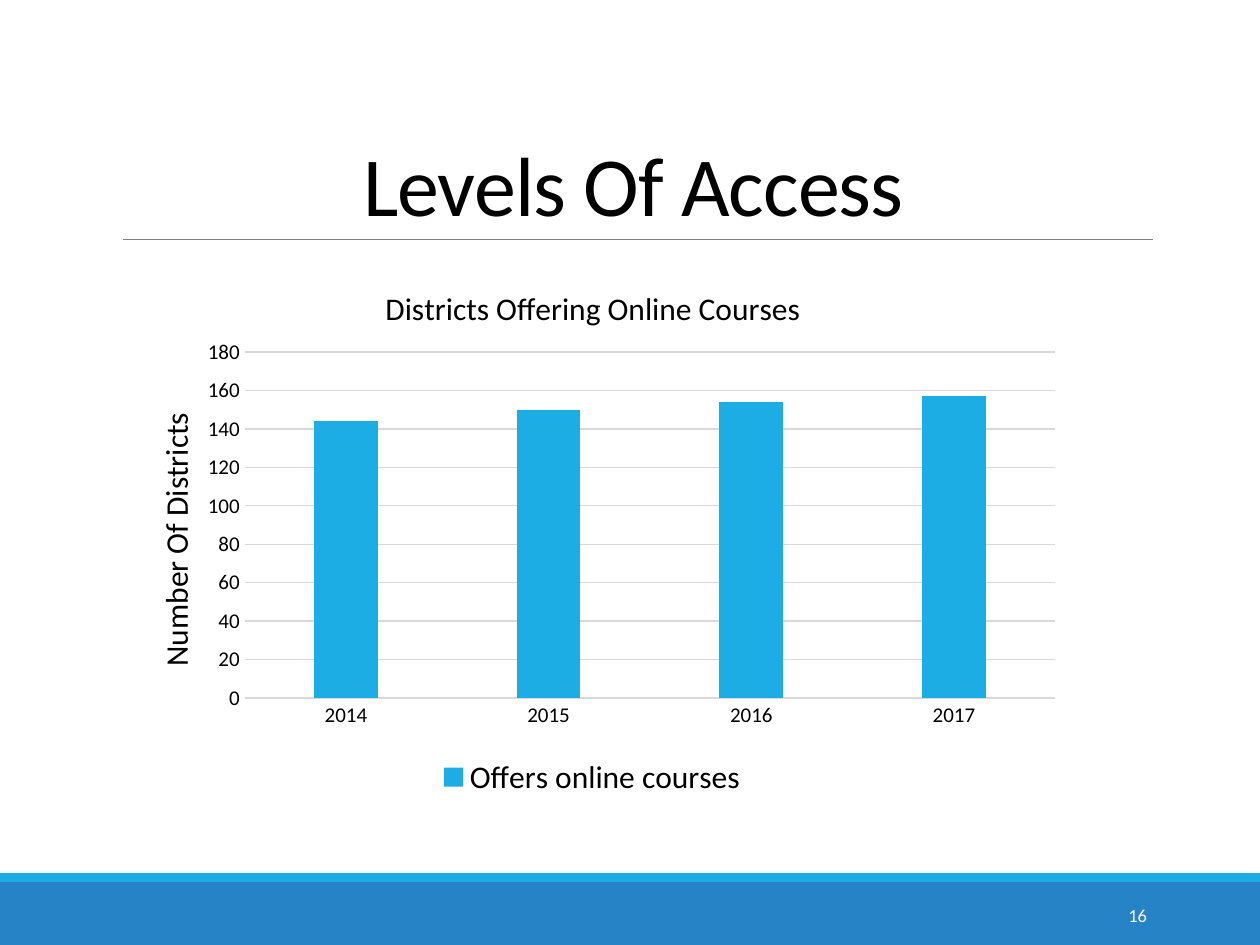
"""Builds the Levels Of Access slide with its chart of districts offering online courses."""
from dataclasses import dataclass

import lxml.etree
import pptx
import pptx.chart.data
import pptx.dml.color
import pptx.enum.chart
import pptx.enum.shapes
import pptx.enum.text
import pptx.oxml.ns
import pptx.util

Pt = pptx.util.Pt
RGB = pptx.dml.color.RGBColor.from_string
qn = pptx.oxml.ns.qn


@dataclass(frozen=True)
class Theme:
    font: str = "Calibri"
    text: RGB = RGB("000000")
    light: RGB = RGB("FFFFFF")
    accent: RGB = RGB("1CADE4")
    footer: RGB = RGB("2683C6")
    rule: RGB = RGB("808080")
    grid: RGB = RGB("D9D9D9")
    title_size: float = 48
    heading_size: float = 18
    axis_size: float = 12
    number_size: float = 10.5


theme = Theme()


def style_font(font, size, color):
    font.name = theme.font
    font.size = Pt(size)
    font.bold = False
    font.color.rgb = color


def set_layout(element, index, **values):
    for old in element.findall(qn("c:layout")):
        element.remove(old)
    layout = lxml.etree.Element(qn("c:layout"))
    manual = lxml.etree.SubElement(layout, qn("c:manualLayout"))
    for name, value in values.items():
        lxml.etree.SubElement(manual, qn(f"c:{name}")).set("val", str(value))
    element.insert(index, layout)


presentation = pptx.Presentation()
presentation.slide_width = Pt(720)
presentation.slide_height = Pt(540)
slide = presentation.slides.add_slide(presentation.slide_layouts[6])

for top, height, color in ((504, 36, theme.footer), (499, 5, theme.accent)):
    band = slide.shapes.add_shape(
        pptx.enum.shapes.MSO_SHAPE.RECTANGLE, 0, Pt(top), Pt(720), Pt(height))
    band.shadow.inherit = False
    band.fill.solid()
    band.fill.fore_color.rgb = color
    band.line.fill.background()

title_rule = slide.shapes.add_connector(
    pptx.enum.shapes.MSO_CONNECTOR.STRAIGHT, Pt(70.5), Pt(136.8), Pt(658.8), Pt(136.8))
title_rule.line.color.rgb = theme.rule
title_rule.line.width = Pt(0.5)
lxml.etree.SubElement(title_rule._element.spPr, qn("a:effectLst"))

align = pptx.enum.text.PP_ALIGN
anchor = pptx.enum.text.MSO_ANCHOR
texts = (
    ("Levels Of Access", (65, 22.5, 594, 114.3), align.CENTER, anchor.BOTTOM,
     theme.title_size, theme.text, 0.85, -50),
    ("16", (584.6, 508.5, 77.8, 28.8), align.RIGHT, anchor.MIDDLE,
     theme.number_size, theme.light, 1, 0),
)
for text, box, alignment, vertical, size, color, line_spacing, tracking in texts:
    frame = slide.shapes.add_textbox(*map(Pt, box)).text_frame
    frame.word_wrap = True
    frame.vertical_anchor = vertical
    paragraph = frame.paragraphs[0]
    paragraph.alignment = alignment
    paragraph.line_spacing = line_spacing
    style_font(paragraph.font, size, color)
    run = paragraph.add_run()
    run.text = text
    run._r.get_or_add_rPr().set("spc", str(tracking))

chart_data = pptx.chart.data.CategoryChartData()
chart_data.categories = ["2014", "2015", "2016", "2017"]
chart_data.add_series("Offers online courses", (144, 150, 154, 157))
chart = slide.shapes.add_chart(
    pptx.enum.chart.XL_CHART_TYPE.COLUMN_CLUSTERED,
    Pt(62.6), Pt(144.7), Pt(551.5), Pt(313.9), chart_data).chart
style_font(chart.font, theme.axis_size, theme.text)

chart.has_title = True
value_axis = chart.value_axis
value_axis.has_title = True
headings = (
    (chart.chart_title, "Districts Offering Online Courses", 0.28, 0.05),
    (value_axis.axis_title, "Number Of Districts", 0.04, 0.28),
)
for heading, text, left, top in headings:
    heading.text_frame.text = text
    style_font(heading.text_frame.paragraphs[0].font, theme.heading_size, theme.text)
    set_layout(heading._element, 1, xMode="edge", yMode="edge", x=left, y=top)

for axis in (chart.category_axis, value_axis):
    axis.major_tick_mark = pptx.enum.chart.XL_TICK_MARK.NONE
    axis.minor_tick_mark = pptx.enum.chart.XL_TICK_MARK.NONE
    style_font(axis.tick_labels.font, theme.axis_size, theme.text)
value_axis.minimum_scale = 0
value_axis.maximum_scale = 180
value_axis.major_unit = 20
value_axis.format.line.fill.background()
for line in (chart.category_axis.format.line, value_axis.major_gridlines.format.line):
    line.color.rgb = theme.grid
    line.width = Pt(0.75)

chart.has_legend = True
chart.legend.position = pptx.enum.chart.XL_LEGEND_POSITION.BOTTOM
chart.legend.include_in_layout = False
style_font(chart.legend.font, theme.heading_size, theme.text)

plot = chart.plots[0]
plot.gap_width = 219
plot.overlap = -27
plot.vary_by_categories = False
columns = plot.series[0].format.fill
columns.solid()
columns.fore_color.rgb = theme.accent
set_layout(chart._chartSpace.chart.plotArea, 0, layoutTarget="inner",
           xMode="edge", yMode="edge", x=0.14, y=0.18, w=0.84, h=0.63)

presentation.save("out.pptx")
